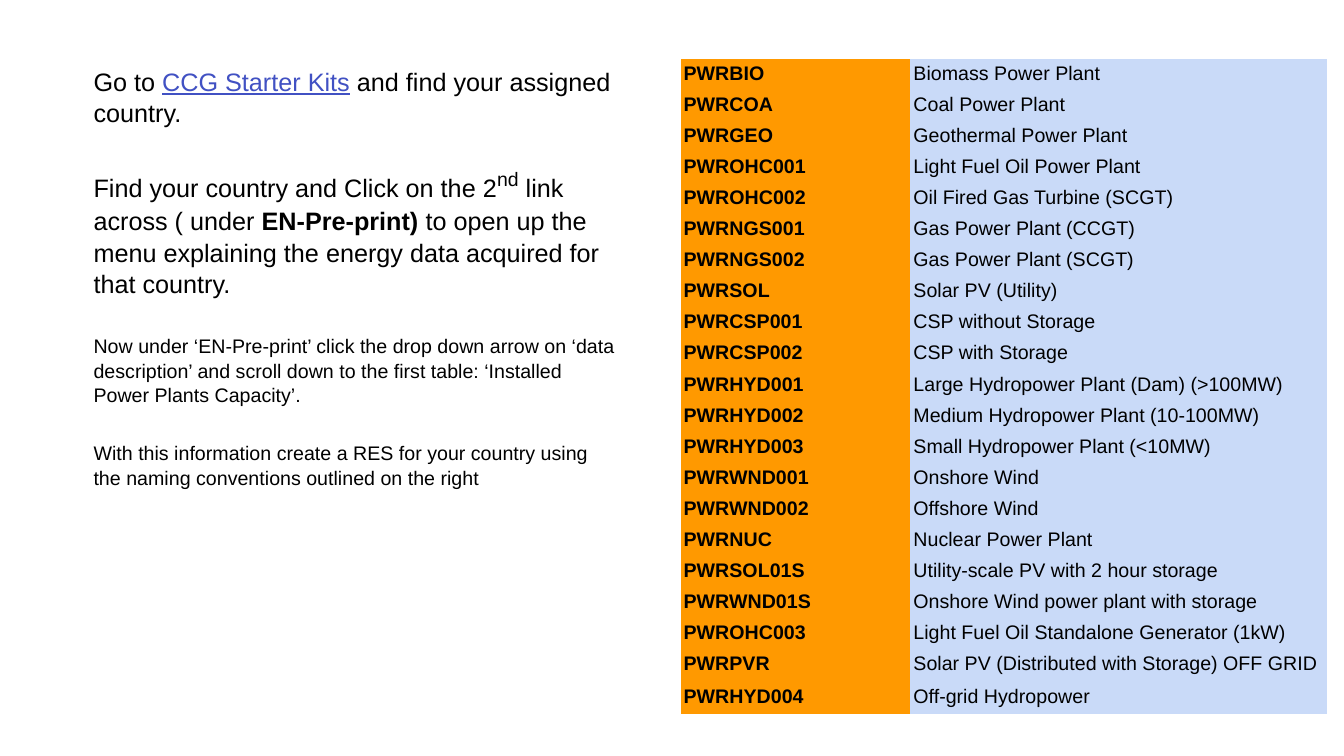
"""Build the slide on starter kits and power plant naming conventions."""
from pptx import Presentation
from pptx import util as u
from pptx.dml.color import RGBColor
from pptx.enum import text

COLOURS = {"ink": "000000", "link": "4151C3", "code": "FF9900", "plant": "C9DAF8"}
FONT = "Arial"

INSTRUCTIONS = [
    (18, [("Go to ", ""), ("CCG Starter Kits", "link"),
          (" and find your assigned country.", "")]),
    (18, [("Find your country and Click on the 2", ""), ("nd", "raised"),
          (" link across ( under ", ""), ("EN-Pre-print) ", "bold"),
          ("to open up the menu explaining the energy data acquired for that country.", "")]),
    (14, [("Now under ‘EN-Pre-print’ click the drop down arrow on ‘data description’ "
           "and scroll down to the first table: ‘Installed Power Plants Capacity’.", "")]),
    (14, [("With this information create a RES for your country using "
           "the naming conventions outlined on the right", "")]),
]

PLANTS = [
    ("PWRBIO", "Biomass Power Plant"),
    ("PWRCOA", "Coal Power Plant"),
    ("PWRGEO", "Geothermal Power Plant"),
    ("PWROHC001", "Light Fuel Oil Power Plant"),
    ("PWROHC002", "Oil Fired Gas Turbine (SCGT)"),
    ("PWRNGS001", "Gas Power Plant (CCGT)"),
    ("PWRNGS002", "Gas Power Plant (SCGT)"),
    ("PWRSOL", "Solar PV (Utility)"),
    ("PWRCSP001", "CSP without Storage"),
    ("PWRCSP002", "CSP with Storage"),
    ("PWRHYD001", "Large Hydropower Plant (Dam) (>100MW)"),
    ("PWRHYD002", "Medium Hydropower Plant (10-100MW)"),
    ("PWRHYD003", "Small Hydropower Plant (<10MW)"),
    ("PWRWND001", "Onshore Wind"),
    ("PWRWND002", "Offshore Wind"),
    ("PWRNUC", "Nuclear Power Plant"),
    ("PWRSOL01S", "Utility-scale PV with 2 hour storage"),
    ("PWRWND01S", "Onshore Wind power plant with storage"),
    ("PWROHC003", "Light Fuel Oil Standalone Generator (1kW)"),
    ("PWRPVR", "Solar PV (Distributed with Storage) OFF GRID"),
    ("PWRHYD004", "Off-grid Hydropower"),
]
COLUMNS = [("code", 2.28, True), ("plant", 4.13, False)]
TABLE_HEIGHT = 6.5
TALL_ROW, TALL_HEIGHT = "PWRPVR", 0.33
NO_STYLE = "{2D5ABB26-0587-4C30-8999-92F81FD0307C}"


def colour(name):
    return RGBColor.from_string(COLOURS[name])


def set_font(font, size, bold=False):
    font.name = FONT
    font.size = u.Pt(size)
    font.bold = bold
    font.color.rgb = colour("ink")


def add_instructions(page):
    box = page.shapes.add_textbox(u.Inches(0.83), u.Inches(0.59), u.Inches(5.37), u.Inches(6.46))
    frame = box.text_frame
    frame.word_wrap = True
    for index, (size, spans) in enumerate(INSTRUCTIONS):
        para = frame.add_paragraph() if index else frame.paragraphs[0]
        para.space_before = u.Pt(12 if index else 0)
        para.space_after = u.Pt(12)
        para.line_spacing = 1.05
        set_font(para.font, size)
        for words, look in spans:
            span = para.add_run()
            span.text = words
            if look == "link":
                span.font.underline = True
                span.font.color.rgb = colour("link")
            elif look == "raised":
                span.font.size = u.Pt(24)
                span._r.get_or_add_rPr().set("baseline", "30000")
            elif look == "bold":
                span.font.bold = True


def add_plants(page):
    width = sum(column[1] for column in COLUMNS)
    frame = page.shapes.add_table(len(PLANTS), len(COLUMNS), u.Inches(6.75), u.Inches(0.59),
                                  u.Inches(width), u.Inches(TABLE_HEIGHT))
    table = frame.table
    table.first_row = table.horz_banding = False
    table._tbl.tblPr[0].text = NO_STYLE
    row_height = (TABLE_HEIGHT - TALL_HEIGHT) / (len(PLANTS) - 1)
    for column, (_, column_width, _) in zip(table.columns, COLUMNS):
        column.width = u.Inches(column_width)
    for row, plant in zip(table.rows, PLANTS):
        row.height = u.Inches(TALL_HEIGHT if plant[0] == TALL_ROW else row_height)
        for cell, words, (fill, _, bold) in zip(row.cells, plant, COLUMNS):
            cell.text = words
            cell.vertical_anchor = text.MSO_ANCHOR.TOP
            cell.margin_left = cell.margin_right = u.Inches(0.03)
            cell.margin_top = cell.margin_bottom = u.Inches(0.03)
            cell.fill.solid()
            cell.fill.fore_color.rgb = colour(fill)
            set_font(cell.text_frame.paragraphs[0].font, 14, bold)


def main():
    deck = Presentation()
    deck.slide_width, deck.slide_height = u.Inches(13.33), u.Inches(7.5)
    page = deck.slides.add_slide(deck.slide_layouts[6])
    add_plants(page)
    add_instructions(page)
    deck.save("out.pptx")


if __name__ == "__main__":
    main()
